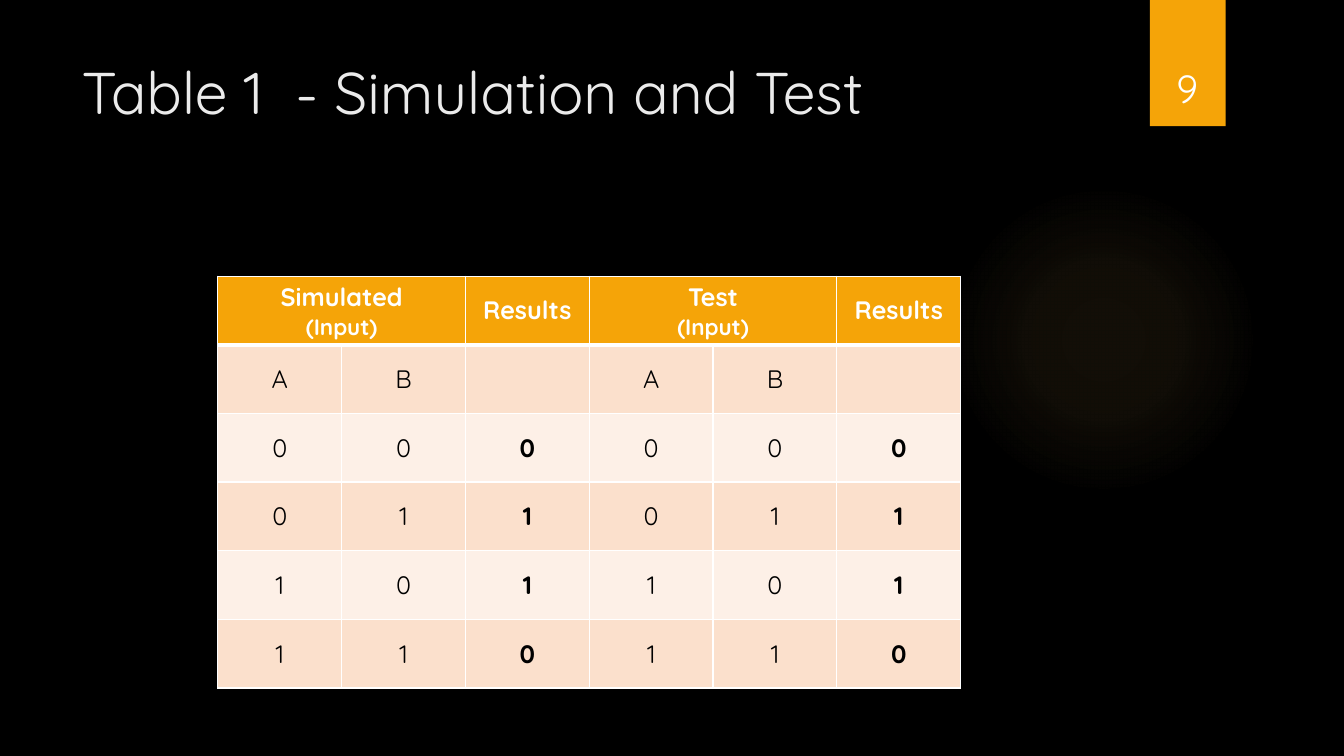
from itertools import product

from lxml import etree
from pptx import Presentation
from pptx.dml.color import RGBColor
from pptx.enum import shapes, text
from pptx.oxml import parse_xml
from pptx.oxml.ns import nsdecls
from pptx.util import Cm, Pt

FONT = "Quicksand"
ORANGE, WHITE, BLACK = "F5A408", "FFFFFF", "000000"
BANDS = ("FBE0CC", "FDF0E7")
CENTER = text.PP_ALIGN.CENTER
GLOW_STOPS = ((0, 7), (36, 6), (69, 0))


def color(value):
    return RGBColor.from_string(value)


def paint(fill, value):
    fill.solid()
    fill.fore_color.rgb = color(value)


def write(frame, lines, align=CENTER, **formats):
    """Fill a text frame with (wording, size) lines."""
    for index, (wording, size) in enumerate(lines):
        para = frame.add_paragraph() if index else frame.paragraphs[0]
        para.alignment = align
        span = para.add_run()
        span.text = wording
        span.font.color.rgb = color(formats.get("ink", WHITE))
        values = {"name": FONT, "size": Pt(size), "bold": formats.get("bold", False)}
        for name, value in values.items():
            setattr(span.font, name, value)


def add_plain_shape(page, kind, left, top, width, height):
    shape = page.shapes.add_shape(kind, Cm(left), Cm(top), Cm(width), Cm(height))
    shape.shadow.inherit = False
    shape.line.fill.background()
    return shape


def add_glow(page):
    glow = add_plain_shape(page, shapes.MSO_SHAPE.OVAL, 23.9, 4.65, 7.82, 7.82)
    stops = "".join(
        f'<a:gs pos="{place * 1000}"><a:srgbClr val="FAC96A">'
        f'<a:alpha val="{alpha * 1000}"/></a:srgbClr></a:gs>'
        for place, alpha in GLOW_STOPS
    )
    gradient = parse_xml(
        f'<a:gradFill {nsdecls("a")}><a:gsLst>{stops}</a:gsLst><a:path path="circle">'
        '<a:fillToRect l="50000" t="50000" r="50000" b="50000"/></a:path></a:gradFill>'
    )
    glow._element.spPr.find("{*}prstGeom").addnext(gradient)


def add_number_tab(page, number):
    tab = add_plain_shape(page, shapes.MSO_SHAPE.RECTANGLE, 28.98, 0, 1.91, 3.18)
    paint(tab.fill, ORANGE)
    tab._element.spPr.find("{*}effectLst").append(parse_xml(
        f'<a:outerShdw {nsdecls("a")} blurRad="{Pt(3)}" dist="{Pt(2)}" dir="5400000">'
        '<a:srgbClr val="000000"><a:alpha val="45000"/></a:srgbClr></a:outerShdw>'
    ))
    box = page.shapes.add_textbox(Cm(28.75), Cm(0.81), Cm(2.34), Cm(2.13))
    box.text_frame.word_wrap = True
    box.text_frame.vertical_anchor = text.MSO_ANCHOR.BOTTOM
    write(box.text_frame, [(number, 28)])


def set_title(page, wording):
    title = page.shapes.title
    place = {"left": Cm(1.8), "top": Cm(1.27), "width": Cm(26.14), "height": Cm(3.89)}
    for name, value in place.items():
        setattr(title, name, value)
    frame = title.text_frame
    frame.auto_size = text.MSO_AUTO_SIZE.NONE
    frame.vertical_anchor = text.MSO_ANCHOR.TOP
    write(frame, [(wording, 42)], text.PP_ALIGN.LEFT, ink="EBEBEB")


def set_borders(cell, widths):
    """Draw white borders; widths maps a side letter to points."""
    properties = cell._tc.get_or_add_tcPr()
    for side, width in widths.items():
        properties.append(parse_xml(
            f'<a:ln{side} {nsdecls("a")} w="{Pt(width)}"><a:solidFill>'
            f'<a:srgbClr val="{WHITE}"/></a:solidFill></a:ln{side}>'
        ))


def add_truth_table(page):
    """Show the exclusive-or results, simulated and tested side by side."""
    heads = {
        0: [("Simulated", 18), ("(Input)", 16)],
        2: [("Results", 18)],
        3: [("Test", 18), ("(Input)", 16)],
        5: [("Results", 18)],
    }
    rows = [("A", "B", "") * 2]
    rows += [(str(a), str(b), str(a ^ b)) * 2 for a, b in product((0, 1), repeat=2)]
    count, columns, width, height = len(rows) + 1, 6, 3.12, 1.73
    table = page.shapes.add_table(
        count, columns, Cm(5.49), Cm(6.96), Cm(columns * width), Cm(count * height)
    ).table
    for line, column in product(range(count), range(columns)):
        cell = table.cell(line, column)
        header_edge = {"T": 3 if line == 1 else 1, "B": 1 if line else 3}
        set_borders(cell, {"L": 1, "R": 1, **header_edge})
        paint(cell.fill, BANDS[(line - 1) % 2] if line else ORANGE)
        cell.vertical_anchor = text.MSO_ANCHOR.MIDDLE
        if line == 0 and column in heads:
            write(cell.text_frame, heads[column], bold=True)
        elif line and rows[line - 1][column]:
            write(cell.text_frame, [(rows[line - 1][column], 18)],
                  ink=BLACK, bold=column % 3 == 2)
    for first in (0, 3):
        table.cell(0, first).merge(table.cell(0, first + 1))


def main():
    deck = Presentation()
    deck.slide_width, deck.slide_height = Cm(33.87), Cm(19.05)
    page = deck.slides.add_slide(deck.slide_layouts[5])
    paint(page.background.fill, BLACK)
    add_glow(page)
    set_title(page, "Table 1  - Simulation and Test")
    add_number_tab(page, "9")
    add_truth_table(page)
    deck.save("out.pptx")


if __name__ == "__main__":
    main()
